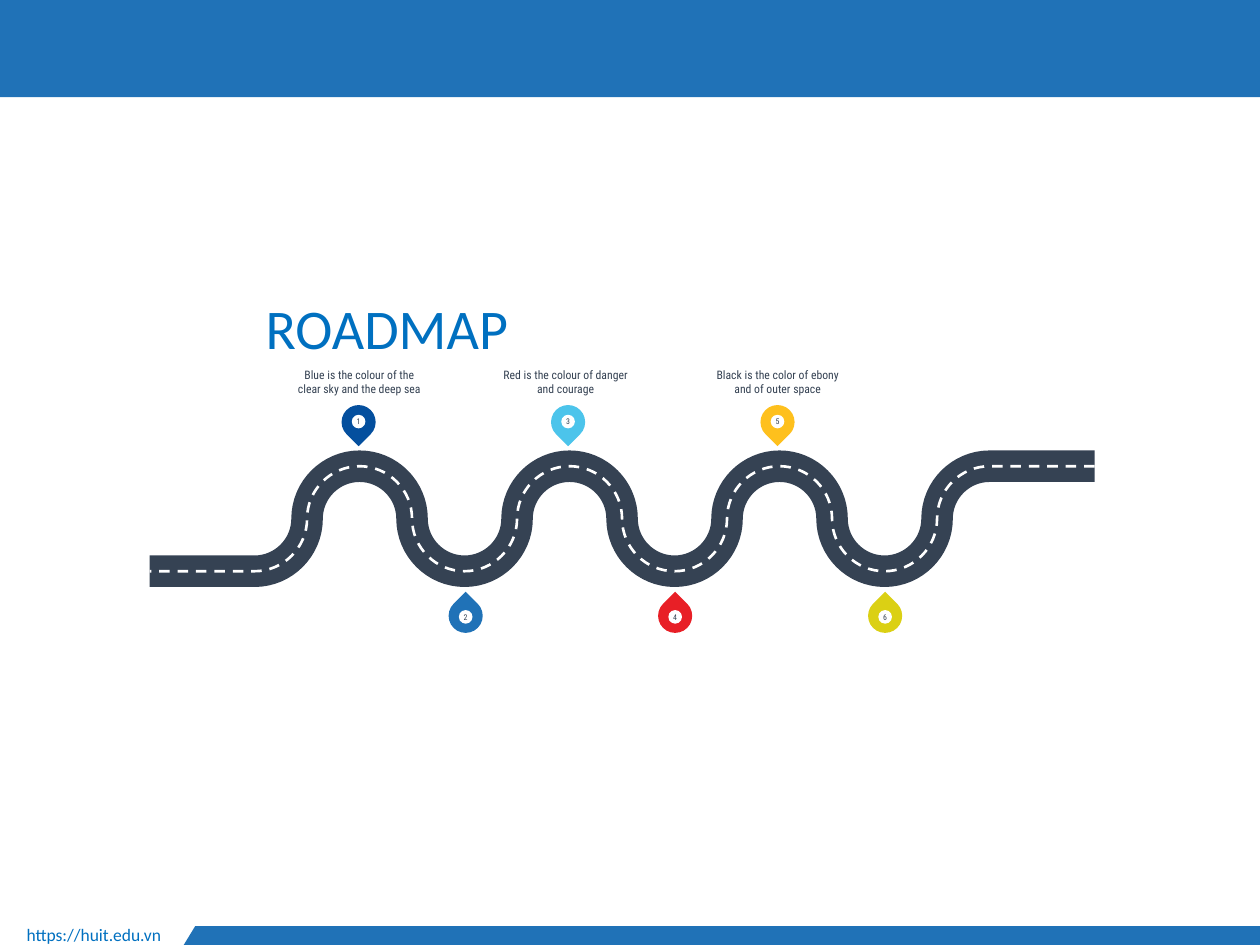
from lxml.etree import SubElement
from pptx import Presentation
from pptx.dml.color import RGBColor
from pptx.enum.dml import MSO_LINE
from pptx.enum.shapes import MSO_SHAPE
from pptx.enum.text import MSO_ANCHOR, PP_ALIGN
from pptx.oxml.ns import qn
from pptx.util import Inches, Pt

BLUE = RGBColor(0x20, 0x72, 0xB7)
TEXT_BLUE = RGBColor(0x00, 0x70, 0xC0)
SLATE = RGBColor(0x35, 0x42, 0x53)
WHITE = RGBColor(0xFF, 0xFF, 0xFF)
# number, column and row of the pin, row of its dot, rotation, colour
PINS = [
    (1, 6.83, 8.04, 8.03, 135, RGBColor(0x04, 0x4F, 0x9E)),
    (3, 10.82, 8.04, 8.03, 135, RGBColor(0x4C, 0xC4, 0xEB)),
    (5, 14.81, 8.04, 8.03, 135, RGBColor(0xFE, 0xC0, 0x1D)),
    (6, 16.86, 11.73, 11.75, 315, RGBColor(0xDB, 0xD0, 0x14)),
    (4, 12.86, 11.73, 11.75, 315, RGBColor(0xE8, 0x1F, 0x26)),
    (2, 8.87, 11.73, 11.75, 315, BLUE),
]
LABELS = [
    (5.57, "Blue is the colour of the clear sky and the deep sea"),
    (9.5, "Red is the colour of danger and courage"),
    (13.54, "Black is the color of ebony and of outer space"),
]
ROUNDNESS = 0.55  # handle length of a quarter circle

prs = Presentation()
prs.slide_width, prs.slide_height = Inches(10), Inches(7.5)
s = prs.slides.add_slide(prs.slide_layouts[5])
shapes = s.shapes
U = prs.slide_width / 24  # square grid of 24 columns by 18 rows


def grid(*cells):
    return [round(c * U) for c in cells]


def write(sp, text, size, font, colour, align=PP_ALIGN.LEFT, anchor=MSO_ANCHOR.TOP, inset=None):
    tf = sp.text_frame
    tf.word_wrap = True
    tf.vertical_anchor = anchor
    if inset is not None:
        for side in ("left", "right", "top", "bottom"):
            setattr(tf, f"margin_{side}", Inches(inset))
    p = tf.paragraphs[0]
    p.alignment = align
    r = p.add_run()
    r.text = text
    for name, value in {"size": Pt(size), "name": font, "bold": False}.items():
        setattr(r.font, name, value)
    r.font.color.rgb = colour
    return p


# Header and footer
header = shapes.add_shape(MSO_SHAPE.RECTANGLE, *grid(0, -0.02, 24, 1.87))
fb = shapes.build_freeform(*grid(3.72, 17.64))
fb.add_line_segments([grid(24, 17.64), grid(24, 18), grid(3.5, 18)], close=True)
for sp in (header, fb.convert_to_shape()):
    sp.shadow.inherit = False
    sp.fill.solid()
    sp.fill.fore_color.rgb = BLUE
    sp.line.fill.background()
write(shapes.add_textbox(*grid(0.27, 17.48, 3.19, 0.67)),
      "https://huit.edu.vn", 10, "Calibri", TEXT_BLUE)

# Title
title = shapes.title
title.left, title.top, title.width, title.height = grid(4.89, 5.7, 11.33, 1.35)
p = write(title, "ROADMAP", 32, "Calibri", TEXT_BLUE, anchor=MSO_ANCHOR.BOTTOM, inset=0.07)
p.line_spacing = 0.9

# Road: fourteen quarter circles, one column in radius, between two straight ends
ROWS = (8.88, 9.88, 10.88, 9.88)
road = [grid(18.85 - i, ROWS[i % 4]) for i in range(15)] + [grid(2.85, 10.88)]
for colour, width, dash in ((SLATE, 18, MSO_LINE.SOLID), (WHITE, 1.5, MSO_LINE.DASH)):
    fb = shapes.build_freeform(*grid(20.85, 8.88))
    fb.add_line_segments(road, close=False)
    sp = fb.convert_to_shape()
    sp.shadow.inherit = False
    sp.fill.background()
    sp.line.color.rgb = colour
    sp.line.width = Pt(width)
    sp.line.dash_style = dash
    # Turn the lines between the straight ends into curves
    lines = list(sp.element.iter(qn("a:lnTo")))
    ends = [(int(line[0].get("x")), int(line[0].get("y"))) for line in lines]
    for i, line in enumerate(lines[1:-1]):
        (x0, y0), (x1, y1) = ends[i], ends[i + 1]
        dx, dy = ROUNDNESS * (x1 - x0), ROUNDNESS * (y1 - y0)
        if i % 2 == 0:
            handles = [(x0 + dx, y0), (x1, y1 - dy)]
        else:
            handles = [(x0, y0 + dy), (x1 - dx, y1)]
        curve = line.getparent().makeelement(qn("a:cubicBezTo"))
        for x, y in handles + [(x1, y1)]:
            SubElement(curve, qn("a:pt"), x=str(round(x)), y=str(round(y)))
        line.getparent().replace(line, curve)

# Numbered pins
for number, x, pin_y, dot_y, rotation, colour in PINS:
    group = shapes.add_group_shape()
    for kind, y, size, fill in ((MSO_SHAPE.TEAR, pin_y, 0.65, colour),
                                (MSO_SHAPE.OVAL, dot_y, 0.26, WHITE)):
        sp = group.shapes.add_shape(kind, *grid(x - size / 2, y - size / 2, size, size))
        sp.shadow.inherit = False
        sp.fill.solid()
        sp.fill.fore_color.rgb = fill
        sp.line.fill.background()
        if kind == MSO_SHAPE.TEAR:
            sp.rotation = rotation
        else:
            write(sp, str(number), 4.5, "Roboto Condensed", SLATE,
                  PP_ALIGN.CENTER, MSO_ANCHOR.MIDDLE, 0)

for left, text in LABELS:
    write(shapes.add_textbox(*grid(left, 6.5, 2.55, 1.05)), text, 6.75,
          "Roboto Condensed", SLATE, PP_ALIGN.CENTER, MSO_ANCHOR.BOTTOM, 0)

prs.save("out.pptx")
